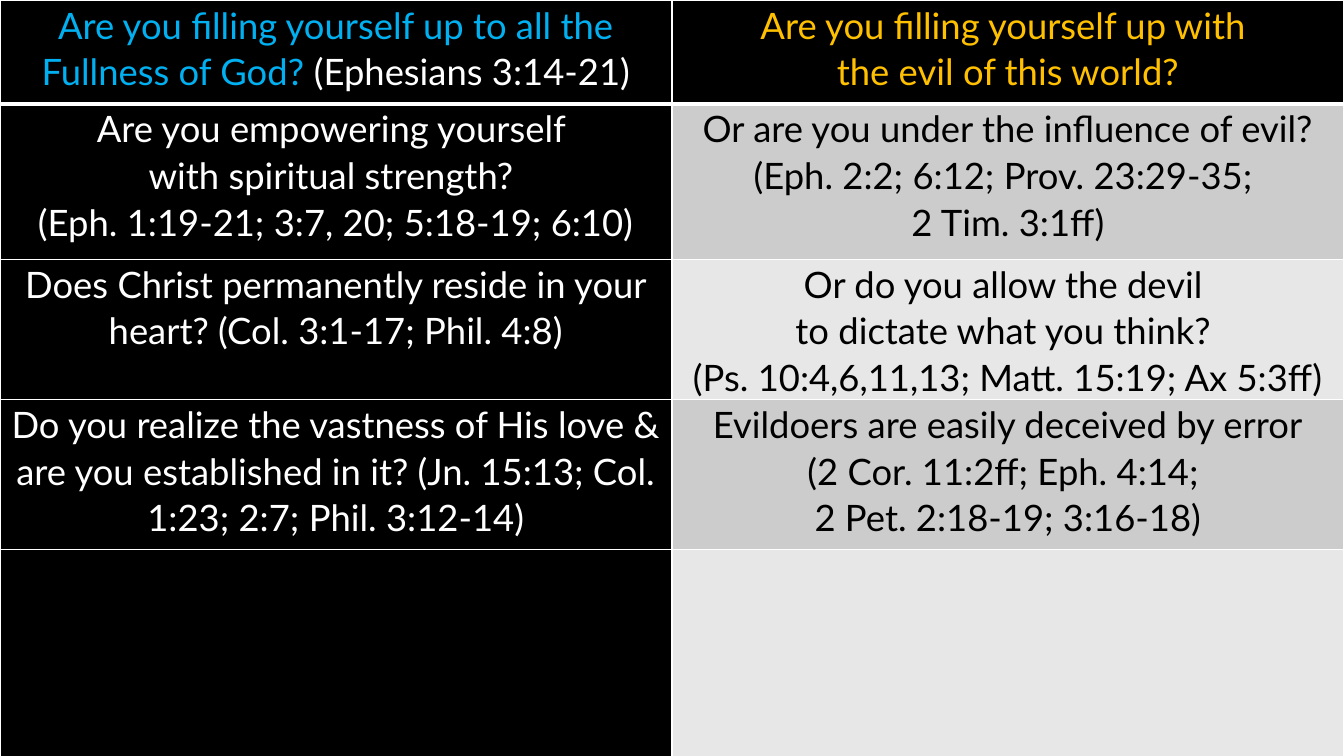
from lxml.etree import SubElement
from pptx import Presentation
from pptx.dml.color import RGBColor
from pptx.enum.text import PP_ALIGN
from pptx.oxml.ns import qn
from pptx.util import Cm, Pt

BLACK = RGBColor(0x00, 0x00, 0x00)
WHITE = RGBColor(0xFF, 0xFF, 0xFF)
BLUE = RGBColor(0x00, 0xB0, 0xF0)
GOLD = RGBColor(0xFF, 0xC0, 0x00)
GREY = RGBColor(0xCC, 0xCC, 0xCC)
LIGHT_GREY = RGBColor(0xE7, 0xE7, 0xE7)

COL_WIDTH = 16.93
ROW_HEIGHTS = [2.62, 3.91, 3.53, 3.78, 5.21]

# Each cell is a list of paragraphs, each paragraph a list of runs
ROWS = [
    ([["Are you filling yourself up to all the Fullness of God? ", "(Ephesians 3:14-21)"]],
     [["Are you filling yourself up with "], ["the evil of this world?"]]),
    ([["Are you empowering yourself "], ["with spiritual strength? "],
      ["(Eph. 1:19-21; 3:7, 20; 5:18-19; 6:10)"]],
     [["Or are you under the influence of evil? (Eph. 2:2; 6:12; Prov. 23:29-35; "],
      ["2 Tim. 3:1ff)"]]),
    ([["Does Christ permanently reside in your heart? (Col. 3:1-17; Phil. 4:8)"]],
     [["Or do you allow the devil "], ["to dictate what you think? "],
      ["(Ps. 10:4,6,11,13; Matt. 15:19; Ax 5:3ff)"]]),
    ([["Do you realize the vastness of His love & are you established in it? "
       "(Jn. 15:13; Col. 1:23; 2:7; Phil. 3:12-14)"]],
     [["Evildoers are easily deceived by error"], ["(2 Cor. 11:2ff; Eph. 4:14; "],
      ["2 Pet. 2:18-19; 3:16-18)"]]),
    ([], []),
]


def set_border(cell, side, width):
    ln = SubElement(cell._tc.get_or_add_tcPr(), qn(f"a:ln{side}"), w=str(Pt(width)))
    fill = SubElement(ln, qn("a:solidFill"))
    SubElement(fill, qn("a:srgbClr"), val=str(WHITE))


def fill_cell(cell, paragraphs, colors):
    """Write the paragraphs; the n-th run of each takes the n-th colour."""
    cell.margin_left = cell.margin_right = Cm(0.18)
    cell.margin_top = cell.margin_bottom = 0
    tf = cell.text_frame
    for i, runs in enumerate(paragraphs):
        p = tf.add_paragraph() if i else tf.paragraphs[0]
        p.alignment = PP_ALIGN.CENTER
        p.line_spacing = 1.07
        for text, color in zip(runs, colors):
            r = p.add_run()
            r.text = text
            r.font.name = "Lato"
            r.font.size = Pt(26)
            r.font.bold = False
            r.font.color.rgb = color


prs = Presentation()
prs.slide_width = Cm(2 * COL_WIDTH)
prs.slide_height = Cm(sum(ROW_HEIGHTS))
s = prs.slides.add_slide(prs.slide_layouts[6])
s.background.fill.solid()
s.background.fill.fore_color.rgb = BLACK

table = s.shapes.add_table(len(ROWS), 2, 0, 0, prs.slide_width, prs.slide_height).table
for column in table.columns:
    column.width = Cm(COL_WIDTH)

for i, (height, texts) in enumerate(zip(ROW_HEIGHTS, ROWS)):
    table.rows[i].height = Cm(height)
    if i == 0:
        styles = [(BLACK, [BLUE, WHITE]), (BLACK, [GOLD])]
    else:
        styles = [(BLACK, [WHITE]), (GREY if i % 2 else LIGHT_GREY, [BLACK])]
    for j, (background, colors) in enumerate(styles):
        cell = table.cell(i, j)
        fill_cell(cell, texts[j], colors)
        for side in "LRTB":
            under_header = (i, side) in [(0, "B"), (1, "T")]
            set_border(cell, side, 3 if under_header else 1)
        cell.fill.solid()
        cell.fill.fore_color.rgb = background

prs.save("out.pptx")
